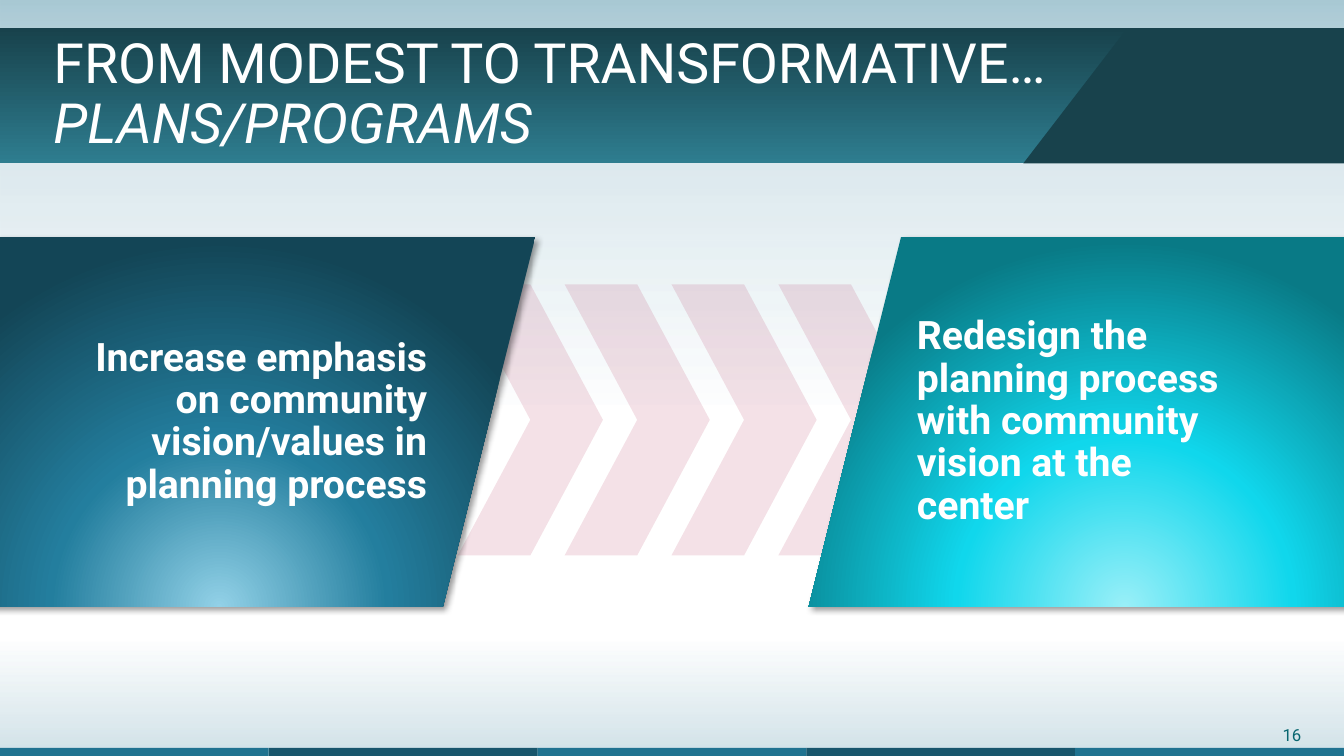
"""Build the slide that contrasts modest and transformative plans and programs."""
from lxml import etree
from pptx import Presentation
from pptx.dml.color import RGBColor
from pptx.enum.shapes import MSO_SHAPE
from pptx.enum.text import MSO_ANCHOR, PP_ALIGN
from pptx.oxml import parse_xml
from pptx.oxml.ns import nsdecls, qn
from pptx.util import Inches, Pt

RECTANGLE, CHEVRON, PARALLELOGRAM = (
    MSO_SHAPE.RECTANGLE, MSO_SHAPE.CHEVRON, MSO_SHAPE.PARALLELOGRAM)
LEFT, CENTER, RIGHT = PP_ALIGN.LEFT, PP_ALIGN.CENTER, PP_ALIGN.RIGHT
MIDDLE, TOP = MSO_ANCHOR.MIDDLE, MSO_ANCHOR.TOP

WHITE = RGBColor(0xFF, 0xFF, 0xFF)
BLUE = RGBColor(0x20, 0x73, 0x90)
DARK_BLUE = RGBColor(0x18, 0x56, 0x6C)
DARK_TEAL = RGBColor(0x18, 0x42, 0x4C)
MID_TEAL = RGBColor(0x2E, 0x7D, 0x8F)
NUMBER_TEAL = RGBColor(0x08, 0x66, 0x70)
CRIMSON = RGBColor(0xA6, 0x0E, 0x3D)
MODEST_GLOW = (RGBColor(0x92, 0xD1, 0xE7), RGBColor(0x23, 0x7E, 0x9E), RGBColor(0x13, 0x45, 0x56))
BOLD_GLOW = (RGBColor(0x99, 0xEF, 0xF8), RGBColor(0x10, 0xD7, 0xEC), RGBColor(0x09, 0x7A, 0x86))

LINEAR_DOWN = '<a:lin ang="5400000" scaled="0"/>'
LINEAR_UP = '<a:lin ang="16200000" scaled="0"/>'
GLOW_FROM_BELOW = ('<a:path path="circle"><a:fillToRect l="50000" t="130000" '
                   'r="50000" b="-30000"/></a:path>')


def write(frame, text, size, color=WHITE, bold=False, italic_from=None,
          align=LEFT, anchor=MIDDLE, spacing=0.9, insets=(0.1, 0.05, 0.1, 0.05)):
    frame.word_wrap = True
    frame.vertical_anchor = anchor
    (frame.margin_left, frame.margin_top,
     frame.margin_right, frame.margin_bottom) = map(Inches, insets)
    paragraph = frame.paragraphs[0]
    paragraph.alignment = align
    paragraph.line_spacing = spacing
    for index, line in enumerate(text.split("\n")):
        if index:
            paragraph.add_line_break()
        run = paragraph.add_run()
        run.text = line
        run.font.name = "Roboto"
        run.font.size = Pt(size)
        run.font.bold = bold
        run.font.italic = italic_from is not None and index >= italic_from
        run.font.color.rgb = color


def add_block(kind, left, top, width, height, color=None, stops=(), direction=""):
    block = slide.shapes.add_shape(
        kind, Inches(left), Inches(top), Inches(width), Inches(height))
    block.shadow.inherit = False
    block.line.fill.background()
    if color is not None:
        block.fill.solid()
        block.fill.fore_color.rgb = color
        return block
    block.fill.background()
    stop_xml = "".join(
        f'<a:gs pos="{position * 1000}"><a:srgbClr val="{stop_color}">'
        f'<a:alpha val="{opacity * 1000}"/></a:srgbClr></a:gs>'
        for position, stop_color, opacity in stops)
    gradient = parse_xml(f'<a:gradFill {nsdecls("a")} rotWithShape="1">'
                         f'<a:gsLst>{stop_xml}</a:gsLst>{direction}</a:gradFill>')
    properties = block.element.spPr
    properties.replace(properties.find(qn("a:noFill")), gradient)
    return block


presentation = Presentation()
presentation.slide_width = Inches(13.33)
presentation.slide_height = Inches(7.5)
slide = presentation.slides.add_slide(presentation.slide_layouts[5])

add_block(RECTANGLE, 0, 6.35, 13.33, 1.15, direction=LINEAR_DOWN,
          stops=[(0, BLUE, 0), (88, BLUE, 18), (100, BLUE, 22)])
add_block(RECTANGLE, 0, 0, 13.33, 4.04, direction=LINEAR_UP,
          stops=[(0, BLUE, 0), (71, BLUE, 18), (100, BLUE, 39)])
add_block(RECTANGLE, 0, 0.28, 13.33, 1.34, direction=LINEAR_DOWN,
          stops=[(0, DARK_TEAL, 100), (100, MID_TEAL, 100)])

corner_outline = slide.shapes.build_freeform(Inches(11.18), Inches(0.28))
corner_outline.add_line_segments(
    [(Inches(x), Inches(y)) for x, y in [(13.33, 0.28), (13.33, 1.62), (10.15, 1.62)]])
banner_corner = corner_outline.convert_to_shape()
banner_corner.shadow.inherit = False
banner_corner.fill.solid()
banner_corner.fill.fore_color.rgb = DARK_TEAL
banner_corner.line.fill.background()

page_number = slide.shapes.add_textbox(Inches(12.3), Inches(7.14), Inches(1.03), Inches(0.3))
write(page_number.text_frame, "16", 12, color=NUMBER_TEAL, align=CENTER,
      anchor=TOP, spacing=1.0)

strip_width = 13.33 / 5
for index in range(5):
    add_block(RECTANGLE, index * strip_width, 7.42, strip_width, 0.1,
              color=DARK_BLUE if index % 2 else BLUE)

for index in range(4):
    chevron = add_block(CHEVRON, 4.54 + index * 1.06, 2.82, 1.44, 2.69, color=CRIMSON)
    tint = chevron.element.spPr.find(qn("a:solidFill")).find(qn("a:srgbClr"))
    etree.SubElement(tint, qn("a:alpha"), val="12000")

title = slide.shapes.title
title.left, title.top = Inches(0.43), Inches(0.3)
title.width, title.height = Inches(10.69), Inches(1.3)
write(title.text_frame, "FROM MODEST TO TRANSFORMATIVE…\nPLANS/PROGRAMS", 39.6, italic_from=1)
title.element.getparent().append(title.element)

panels = [
    (-0.96, MODEST_GLOW, RIGHT, (0.6, 0.17, 0.17, 0.17),
     "Increase emphasis on community vision/values in planning process"),
    (8.02, BOLD_GLOW, LEFT, (0.17, 0.17, 1.1, 0.17),
     "Redesign the planning process with community vision at the center"),
]
for left, glow, align, insets, message in panels:
    panel = add_block(PARALLELOGRAM, left, 2.35, 6.27, 3.67, direction=GLOW_FROM_BELOW,
                      stops=[(position, color, 100)
                             for position, color in zip((0, 46, 100), glow)])
    panel.element.spPr.find(qn("a:effectLst")).append(parse_xml(
        f'<a:outerShdw {nsdecls("a")} blurRad="{Pt(4)}" dist="{Pt(3)}" dir="2700000" '
        'algn="tl" rotWithShape="0"><a:srgbClr val="000000"><a:alpha val="40000"/>'
        '</a:srgbClr></a:outerShdw>'))
    write(panel.text_frame, message, 28, bold=True, align=align, insets=insets)

presentation.save("out.pptx")
